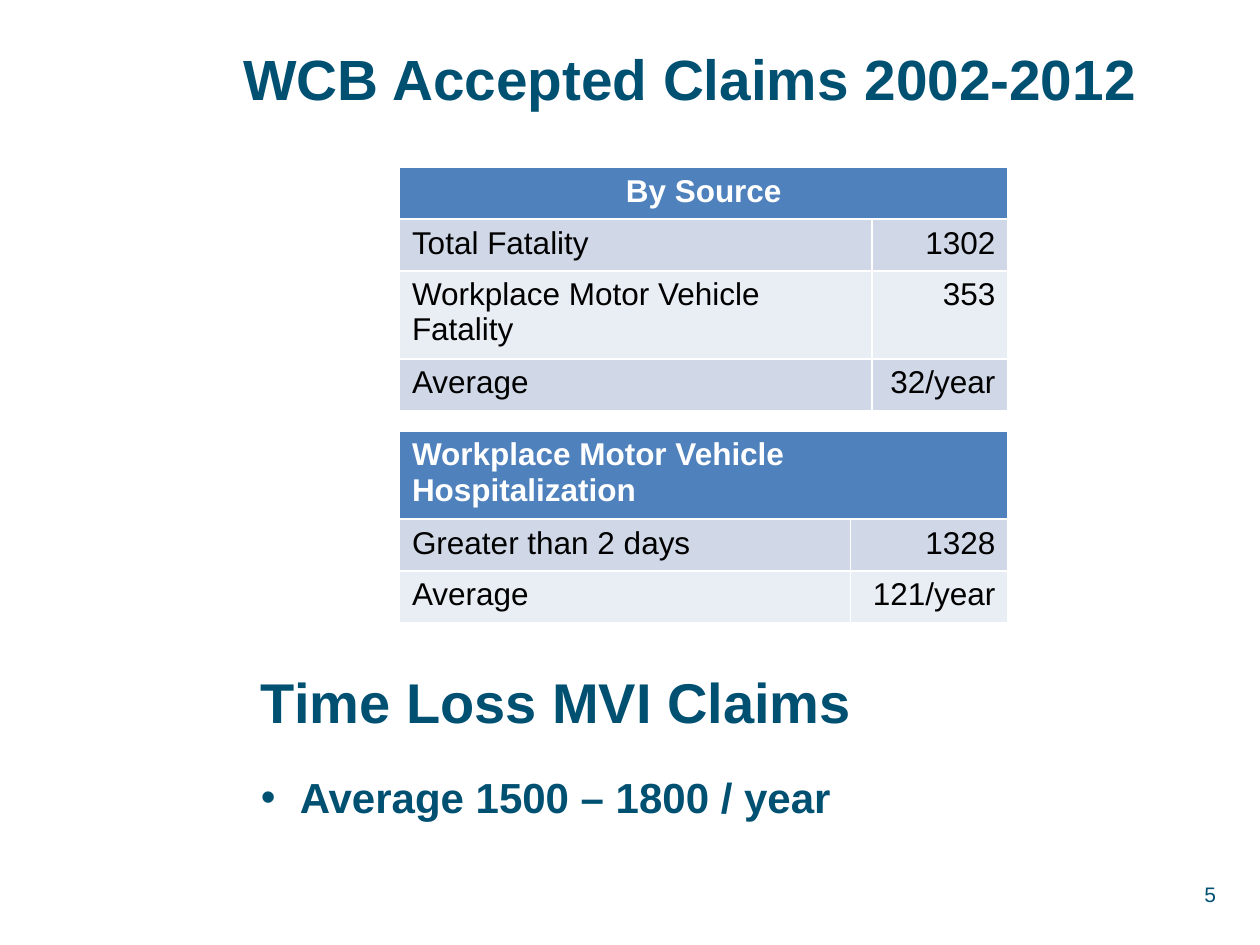
"""Build the slide of accepted workplace claims, 2002-2012."""
from lxml import etree
from pptx import Presentation
from pptx.dml.color import RGBColor
from pptx.enum.text import MSO_ANCHOR, MSO_AUTO_SIZE, PP_ALIGN
from pptx.oxml.ns import qn
from pptx.util import Inches, Pt

TOP = MSO_ANCHOR.TOP
FIXED, GROW = MSO_AUTO_SIZE.NONE, MSO_AUTO_SIZE.SHAPE_TO_FIT_TEXT
LEFT, MID, RIGHT = PP_ALIGN.LEFT, PP_ALIGN.CENTER, PP_ALIGN.RIGHT
TEAL = RGBColor(0x00, 0x50, 0x72)
BLUE = RGBColor(0x4F, 0x81, 0xBD)
BANDS = [RGBColor(0xE9, 0xED, 0xF4), RGBColor(0xD0, 0xD8, 0xE8)]
WHITE = RGBColor(0xFF, 0xFF, 0xFF)
BLACK = RGBColor(0x00, 0x00, 0x00)
ROW = 0.41


def style(para, size, color, bold=False, align=LEFT):
    """Set the font and alignment of a paragraph."""
    para.alignment = align
    font = para.font
    font.name, font.size, font.bold = "Arial", Pt(size), bold
    font.color.rgb = color


def place(shape, left, top, width, height):
    """Move and size a shape, lengths in inches."""
    shape.left, shape.top = Inches(left), Inches(top)
    shape.width, shape.height = Inches(width), Inches(height)


deck = Presentation()
deck.slide_width, deck.slide_height = Inches(10), Inches(7.5)
slide = deck.slides.add_slide(deck.slide_layouts[1])

title = slide.shapes.title
place(title, 1.83, 0.3, 7.92, 1.25)
frame = title.text_frame
frame.text = "WCB Accepted Claims 2002-2012"
frame.vertical_anchor, frame.auto_size = TOP, FIXED
style(frame.paragraphs[0], 32.4, TEAL, True)

number = slide.shapes.add_textbox(Inches(8.58), Inches(6.95), Inches(1.17), Inches(0.4))
number.text_frame.word_wrap = True
number.text_frame.text = "5"
style(number.text_frame.paragraphs[0], 12, TEAL, align=RIGHT)

tables = [
    (1.33, (3.75, 1.08), "By Source", MID,
     [("Total Fatality", "1302"),
      ("Workplace Motor Vehicle Fatality", "353"),
      ("Average", "32/year")]),
    (3.42, (3.58, 1.25), "Workplace Motor Vehicle Hospitalization", LEFT,
     [("Greater than 2 days", "1328"),
      ("Average", "121/year")]),
]
for top, widths, head, align, rows in tables:
    count = len(rows) + 1
    grid = slide.shapes.add_table(
        count, 2, Inches(3.17), Inches(top), Inches(sum(widths)), Inches(ROW * count)
    ).table
    for col, width in zip(grid.columns, widths):
        col.width = Inches(width)
    cell = grid.cell(0, 0)
    cell.merge(grid.cell(0, 1))
    cell.text = head
    cell.fill.solid()
    cell.fill.fore_color.rgb = BLUE
    style(cell.text_frame.paragraphs[0], 18, WHITE, True, align)
    for r, row in enumerate(rows, 1):
        for c, text in enumerate(row):
            cell = grid.cell(r, c)
            cell.text = text
            cell.fill.solid()
            cell.fill.fore_color.rgb = BANDS[r % 2]
            style(cell.text_frame.paragraphs[0], 18, BLACK, align=(LEFT, RIGHT)[c])

body = slide.placeholders[1]
place(body, 1.97, 5.25, 7.25, 1.35)
frame = body.text_frame
frame.vertical_anchor, frame.auto_size = TOP, GROW
frame.text = "Time Loss MVI Claims\nAverage 1500 – 1800 / year"
head, item = frame.paragraphs
for para, indent, size, gap in ((head, 0, 32, 0), (item, 0.31, 24, 21)):
    props = para._p.get_or_add_pPr()
    props.set("marL", str(Inches(indent)))
    props.set("indent", str(Inches(-indent)))
    if indent:
        etree.SubElement(props, qn("a:buFont")).set("typeface", "Arial")
        etree.SubElement(props, qn("a:buChar")).set("char", "•")
    else:
        etree.SubElement(props, qn("a:buNone"))
    para.space_before = Pt(gap)
    style(para, size, TEAL, True)

deck.save("out.pptx")
